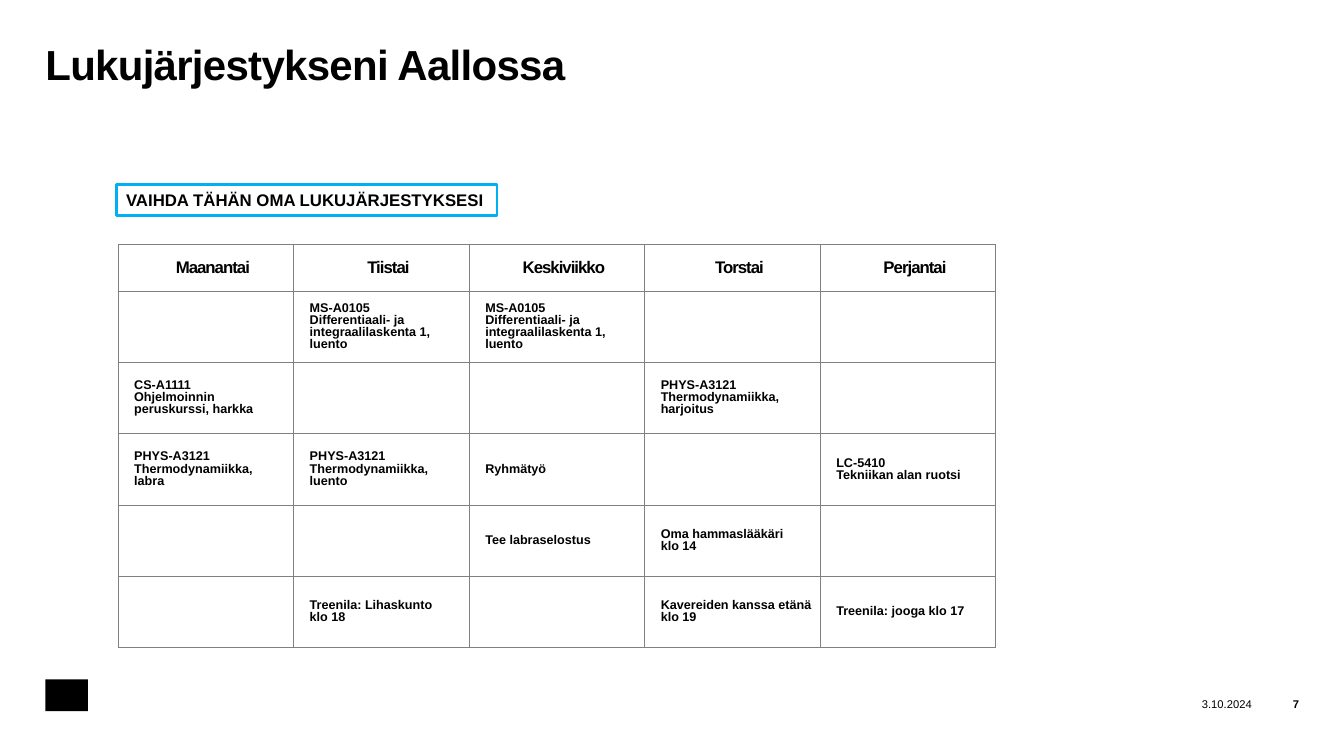
"""Build a slide with a weekly university timetable."""
from pptx import Presentation
from pptx.dml.color import RGBColor
from pptx.enum import shapes, text
from pptx.oxml import parse_xml
from pptx.oxml.ns import nsdecls
from pptx.util import Pt

COLORS = {"black": "000000", "white": "FFFFFF", "blue": "00B0F0", "grey": "808080"}
LEFT, CENTER, RIGHT = text.PP_ALIGN.LEFT, text.PP_ALIGN.CENTER, text.PP_ALIGN.RIGHT
MIDDLE = text.MSO_ANCHOR.MIDDLE


def write(frame, content, size, bold=True, align=LEFT, line_spacing=1.0, tracking=0):
    """Fill a text frame with one paragraph per line."""
    for index, line in enumerate(content.split("\n")):
        paragraph = frame.add_paragraph() if index else frame.paragraphs[0]
        paragraph.alignment = align
        paragraph.line_spacing = line_spacing
        run = paragraph.add_run()
        run.text = line
        run.font.name = "Arial"
        run.font.size = Pt(size)
        run.font.bold = bold
        run.font.color.rgb = RGBColor.from_string(COLORS["black"])
        if tracking:
            run.font._element.set("spc", str(round(tracking * 100)))


def set_margins(target, left=0, top=0, right=0, bottom=0):
    """Set the four inner margins of a text frame or table cell."""
    target.margin_left, target.margin_top = Pt(left), Pt(top)
    target.margin_right, target.margin_bottom = Pt(right), Pt(bottom)


presentation = Presentation()
presentation.slide_width, presentation.slide_height = Pt(960), Pt(540)
slide = presentation.slides.add_slide(presentation.slide_layouts[5])

title = slide.shapes.title
title.left, title.top, title.width, title.height = Pt(32.4), Pt(31.7), Pt(895.7), Pt(85)
frame = title.text_frame
frame.auto_size = text.MSO_AUTO_SIZE.NONE
frame.vertical_anchor = text.MSO_ANCHOR.TOP
set_margins(frame)
write(frame, "Lukujärjestykseni Aallossa", 30, line_spacing=0.9, tracking=-0.5)

emblem = slide.shapes.add_shape(
    shapes.MSO_SHAPE.RECTANGLE, Pt(32.4), Pt(485.3), Pt(30.5), Pt(22.7))
emblem.shadow.inherit = False
emblem.fill.solid()
emblem.fill.fore_color.rgb = RGBColor.from_string(COLORS["black"])
emblem.line.fill.background()

for content, left, width, bold in [("3.10.2024", 803.5, 90.7, False), ("7", 894.2, 33.8, True)]:
    footer = slide.shapes.add_textbox(Pt(left), Pt(496.8), Pt(width), Pt(11.5))
    frame = footer.text_frame
    frame.word_wrap = True
    frame.vertical_anchor = MIDDLE
    set_margins(frame)
    write(frame, content, 8, bold=bold, align=RIGHT)

DAYS = ["Maanantai", "Tiistai", "Keskiviikko", "Torstai", "Perjantai"]
CALCULUS = "MS-A0105\nDifferentiaali- ja\nintegraalilaskenta 1,\nluento"
THERMODYNAMICS = "PHYS-A3121\nThermodynamiikka,\n"
TIMETABLE = [
    DAYS,
    ["", CALCULUS, CALCULUS, "", ""],
    ["CS-A1111\nOhjelmoinnin\nperuskurssi, harkka", "", "", THERMODYNAMICS + "harjoitus", ""],
    [THERMODYNAMICS + "labra", THERMODYNAMICS + "luento", "Ryhmätyö", "",
     "LC-5410\nTekniikan alan ruotsi"],
    ["", "", "Tee labraselostus", "Oma hammaslääkäri\nklo 14", ""],
    ["", "Treenila: Lihaskunto\nklo 18", "", "Kavereiden kanssa etänä\nklo 19",
     "Treenila: jooga klo 17"],
]
table = slide.shapes.add_table(
    len(TIMETABLE), len(DAYS), Pt(84.4), Pt(174.6), Pt(627), Pt(288)).table
table.first_row = table.horz_banding = False
for column in table.columns:
    column.width = Pt(125.4)
for row_index, entries in enumerate(TIMETABLE):
    header = row_index == 0
    table.rows[row_index].height = Pt(33.5 if header else 50.9)
    for column_index, entry in enumerate(entries):
        cell = table.cell(row_index, column_index)
        cell.vertical_anchor = MIDDLE
        set_margins(cell, left=10 if header else 11.5)
        for side in "LRTB":
            cell._tc.get_or_add_tcPr().append(parse_xml(
                f'<a:ln{side} {nsdecls("a")} w="{Pt(0.5)}"><a:solidFill>'
                f'<a:srgbClr val="{COLORS["grey"]}"/></a:solidFill></a:ln{side}>'))
        cell.fill.background()
        if header:
            write(cell.text_frame, entry, 12, align=CENTER, tracking=-0.7)
        elif entry:
            write(cell.text_frame, entry, 9, line_spacing=0.85)

reminder = slide.shapes.add_shape(
    shapes.MSO_SHAPE.RECTANGLE, Pt(83), Pt(132), Pt(272), Pt(21.8))
reminder.shadow.inherit = False
reminder.fill.solid()
reminder.fill.fore_color.rgb = RGBColor.from_string(COLORS["white"])
reminder.line.color.rgb = RGBColor.from_string(COLORS["blue"])
reminder.line.width = Pt(2)
frame = reminder.text_frame
frame.word_wrap = False
frame.vertical_anchor = text.MSO_ANCHOR.TOP
set_margins(frame, 7.2, 3.6, 7.2, 3.6)
write(frame, "VAIHDA TÄHÄN OMA LUKUJÄRJESTYKSESI", 12)

presentation.save("out.pptx")
